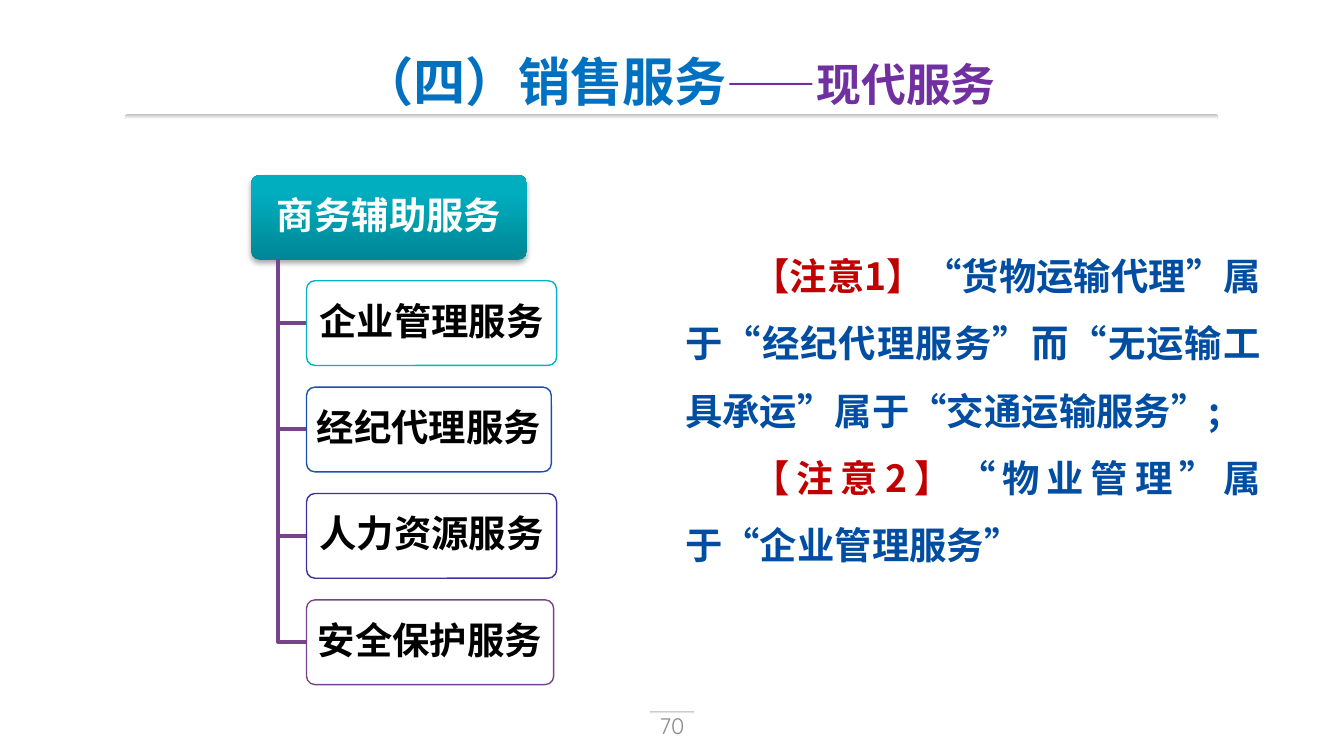
import pptx
import pptx.dml.color
import pptx.enum.shapes
import pptx.enum.text
import pptx.oxml.ns
import pptx.util
from lxml import etree

Pt = pptx.util.Pt
RGB = pptx.dml.color.RGBColor.from_string
qn = pptx.oxml.ns.qn
ALIGN = pptx.enum.text.PP_ALIGN
MIDDLE = pptx.enum.text.MSO_ANCHOR.MIDDLE
ROUNDED = pptx.enum.shapes.MSO_SHAPE.ROUNDED_RECTANGLE

THEME = {
    "latin": "Arial", "cjk": "Noto Sans CJK SC", "number": "Quicksand",
    "title": 28, "subtitle": 24, "body": 20, "page": 12,
    "title_blue": "0070C0", "title_purple": "7030A0",
    "note_red": "C00000", "note_blue": "004DA1",
    "white": "FFFFFF", "black": "000000", "page_grey": "8C8C8C",
    "rule_grey": "BFBFBF", "teal_dark": "008694", "teal": "00AEC0",
    "branch": "77448C",
}


def write(paragraph, runs, size, align, latin=THEME["latin"], bold=True):
    """Fill a paragraph with (text, colour) runs in one font."""
    paragraph.alignment = align
    font = paragraph.font
    font.name, font.size, font.bold = latin, Pt(size), bold
    etree.SubElement(font._element, qn("a:ea"), typeface=THEME["cjk"])
    for text, colour in runs:
        run = paragraph.add_run()
        run.text = text
        run.font.color.rgb = RGB(THEME[colour])


def rounded(left, top, width, height, radius, gradient=None):
    """Add a rounded rectangle; gradient is (start, end, end position, angle)."""
    shape = slide.shapes.add_shape(ROUNDED, Pt(left), Pt(top), Pt(width), Pt(height))
    shape.adjustments[0] = radius
    shape.shadow.inherit = False
    if gradient:
        start, end, position, angle = gradient
        shape.fill.gradient()
        shape.fill.gradient_angle = angle
        first, last = shape.fill.gradient_stops
        first.color.rgb, first.position = RGB(THEME[start]), 0
        last.color.rgb, last.position = RGB(THEME[end]), position
        shape.line.fill.background()
    frame = shape.text_frame
    frame.word_wrap = True
    frame.vertical_anchor = MIDDLE
    frame.margin_left = frame.margin_right = Pt(4)
    frame.margin_top = frame.margin_bottom = Pt(3)
    return shape


presentation = pptx.Presentation()
presentation.slide_width, presentation.slide_height = Pt(720), Pt(405)
slide = presentation.slides.add_slide(presentation.slide_layouts[6])

# Rules under the title and above the page number
for left, top, width, height in [(67, 61.2, 585.4, 2.6), (348.4, 380.9, 23.2, 1.4)]:
    rounded(left, top, width, height, 0.5, ("rule_grey", "white", 1, 270))

# Page number
page = slide.shapes.add_textbox(Pt(276), Pt(378), Pt(168), Pt(21.6)).text_frame
page.word_wrap = True
page.vertical_anchor = MIDDLE
write(page.paragraphs[0], [("70", "page_grey")], THEME["page"], ALIGN.CENTER,
      THEME["number"], bold=False)

# Root of the service tree
root_left, root_top, root_height = 134.6, 93.8, 45.4
root = rounded(root_left, root_top, 147.8, root_height, 0.1,
               ("teal_dark", "teal", 0.8, 90))
write(root.text_frame.paragraphs[0], [("商务辅助服务", "white")],
      THEME["body"], ALIGN.CENTER)
root.text_frame.paragraphs[0].line_spacing = 0.9
effects = root._element.spPr.find(qn("a:effectLst"))
shadow = etree.SubElement(effects, qn("a:outerShdw"), blurRad=str(Pt(3.1)),
                          dist=str(Pt(1.8)), dir="5400000", rotWithShape="0")
shadow_colour = etree.SubElement(shadow, qn("a:srgbClr"), val=THEME["black"])
etree.SubElement(shadow_colour, qn("a:alpha"), val="35000")

# Branches and their services
services = [
    ("企业管理服务", 134, "01B3C5"),
    ("经纪代理服务", 131.2, "1750B3"),
    ("人力资源服务", 134, "402DA0"),
    ("安全保护服务", 132.4, "77448C"),
]
trunk, service_left, first_top, pitch = 149.3, 164.2, 150.4, 57
for index, (name, width, outline) in enumerate(services):
    top = first_top + index * pitch
    middle = top + root_height / 2

    builder = slide.shapes.build_freeform(trunk, root_top + root_height, scale=Pt(1))
    builder.add_line_segments([(trunk, middle), (service_left, middle)], close=False)
    branch = builder.convert_to_shape()
    branch.shadow.inherit = False
    branch.fill.background()
    branch.line.color.rgb = RGB(THEME["branch"])
    branch.line.width = Pt(2)

    service = rounded(service_left, top, width, root_height, 0.1)
    service.fill.solid()
    service.fill.fore_color.rgb = RGB(THEME["white"])
    service.line.color.rgb = RGB(outline)
    service.line.width = Pt(0.75)
    write(service.text_frame.paragraphs[0], [(name, "black")],
          THEME["body"], ALIGN.CENTER)
    service.text_frame.paragraphs[0].line_spacing = 0.9

# Title
title = slide.shapes.add_textbox(Pt(73.4), Pt(23.8), Pt(580.3), Pt(39.6)).text_frame
title.word_wrap = True
title.margin_top = title.margin_bottom = Pt(2.7)
heading = title.paragraphs[0]
write(heading, [("（四）销售服务", "title_blue"), ("——现代服务", "title_purple")],
      THEME["title"], ALIGN.CENTER)
heading.runs[1].font.size = Pt(THEME["subtitle"])

# Notes
notes = [
    ("【注意1】", "“货物运输代理”属于“经纪代理服务”而“无运输工具承运”属于“交通运输服务”;"),
    ("【注意2】", "“物业管理”属于“企业管理服务”"),
]
note_frame = slide.shapes.add_textbox(Pt(360), Pt(120.2), Pt(322.6), Pt(183.6)).text_frame
note_frame.word_wrap = True
for index, (label, text) in enumerate(notes):
    note = note_frame.add_paragraph() if index else note_frame.paragraphs[0]
    note.line_spacing = 1.5
    write(note, [(label, "note_red"), (text, "note_blue")],
          THEME["body"], ALIGN.JUSTIFY, THEME["cjk"])
    note._p.pPr.set("marL", "0")
    note._p.pPr.set("indent", str(Pt(36)))

presentation.save("out.pptx")
